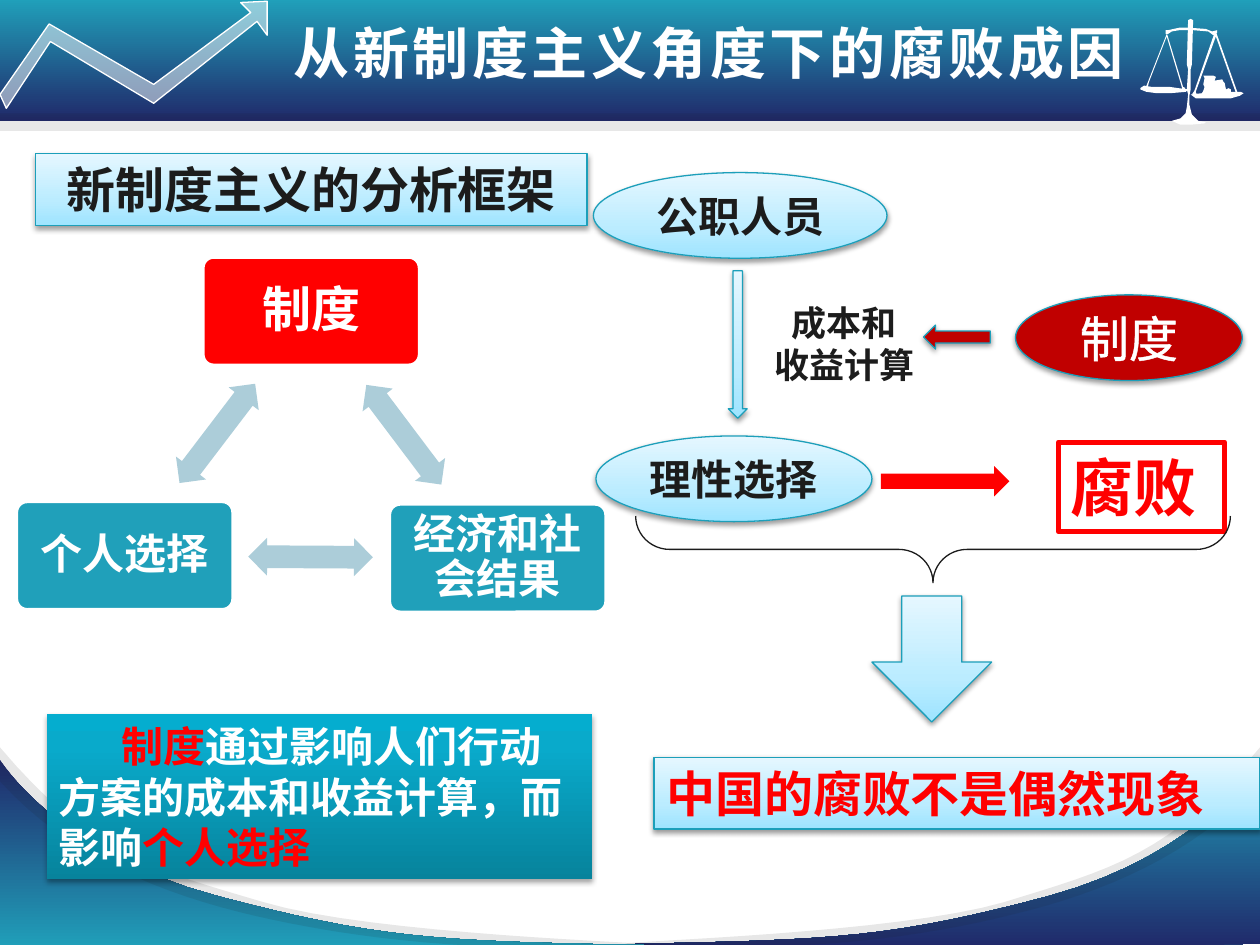
from lxml import etree
from pptx import Presentation
from pptx.dml.color import RGBColor
from pptx.enum.shapes import MSO_SHAPE
from pptx.enum.text import MSO_ANCHOR, MSO_AUTO_SIZE, PP_ALIGN
from pptx.oxml.ns import qn
from pptx.util import Inches, Pt

RECT, ROUNDED, OVAL = MSO_SHAPE.RECTANGLE, MSO_SHAPE.ROUNDED_RECTANGLE, MSO_SHAPE.OVAL
DOWN, LEFT_ARROW, RIGHT_ARROW = MSO_SHAPE.DOWN_ARROW, MSO_SHAPE.LEFT_ARROW, MSO_SHAPE.RIGHT_ARROW
TWO_WAY, BRACE = MSO_SHAPE.LEFT_RIGHT_ARROW, MSO_SHAPE.LEFT_BRACE
LEFT, CENTER = PP_ALIGN.LEFT, PP_ALIGN.CENTER
TOP, MIDDLE = MSO_ANCHOR.TOP, MSO_ANCHOR.MIDDLE
NO_FIT = MSO_AUTO_SIZE.NONE

WHITE = RGBColor(0xFF, 0xFF, 0xFF)
INK = RGBColor(0x1C, 0x1C, 0x1C)
RED = RGBColor(0xFF, 0x00, 0x00)
DARK_RED = RGBColor(0xC0, 0x00, 0x00)
TEAL = RGBColor(0x20, 0xA0, 0xBA)
NAVY = RGBColor(0x20, 0x29, 0x6A)
EDGE = RGBColor(0x1C, 0x9F, 0xBA)
PALE_TEAL = RGBColor(0xAC, 0xCD, 0xD9)

# Gradients run from top to bottom: (position in percent, colour)
BANNER = [(0, TEAL), (100, NAVY)]
BANNER_UP = [(0, NAVY), (100, TEAL)]
ICE = [(0, RGBColor(0xE5, 0xF7, 0xFF)), (65, RGBColor(0xBB, 0xEC, 0xFF)),
       (100, RGBColor(0x9E, 0xE4, 0xFF))]
DEEP = [(0, RGBColor(0x05, 0xAD, 0xCF)), (20, RGBColor(0x09, 0xAA, 0xCB)),
        (100, RGBColor(0x07, 0x83, 0x9C))]

LATIN, CJK = "Arial", "Noto Sans CJK SC"

# Outlines in inches: pairs are corners, sextuples are Bezier segments
HEADER = [(-0.01, 0.96), (-0.01, -0.01), (10, -0.01), (10.02, 0.96)]
RIGHT_CORNER = [(10, 6.02), (10, 7.49), (10, 7.49, 5.32, 7.56, 5.04, 7.49),
                (6.64, 7.46, 7.09, 7.44, 8.33, 7.11), (9.57, 6.77, 10, 6.02, 10, 6.02)]
RIGHT_RIM = [(10.01, 5.92), (9.29, 6.79, 8.81, 6.9, 7.97, 7.16),
             (7.12, 7.41, 4.94, 7.47, 4.96, 7.49), (6.32, 7.58, 7.31, 7.44, 8.03, 7.26),
             (8.74, 7.09, 9.48, 6.79, 10, 6.2)]
LEFT_CORNER = [(0, 6.03), (0, 7.5), (0, 7.5, 4.82, 7.57, 5.11, 7.5),
               (3.46, 7.47, 3, 7.45, 1.72, 7.11), (0.44, 6.77, 0, 6.03, 0, 6.03)]
LEFT_RIM = [(-0.01, 5.92), (0.73, 6.8, 1.22, 6.9, 2.09, 7.16),
            (2.96, 7.42, 5.21, 7.48, 5.19, 7.5), (3.79, 7.58, 2.77, 7.44, 2.03, 7.27),
            (1.29, 7.1, 0.54, 6.8, 0, 6.2)]
TREND = [(0, 0.75), (0.39, 0.19), (1.22, 0.67), (1.99, 0.1), (1.91, 0.02), (2.12, 0.01),
         (2.12, 0.28), (2.04, 0.17), (1.22, 0.82), (0.4, 0.33), (0.05, 0.86)]
SCALES = [
    # Post and foot
    [(9.43, 0.16), (9.45, 0.15), (9.47, 0.16), (9.46, 0.51), (9.45, 0.55), (9.45, 0.71),
     (9.44, 0.76), (9.44, 0.83), (9.46, 0.91), (9.51, 0.96), (9.57, 0.97), (9.56, 0.98),
     (9.45, 0.99), (9.37, 0.99), (9.3, 0.96), (9.37, 0.94), (9.41, 0.9), (9.42, 0.85),
     (9.43, 0.75), (9.42, 0.71), (9.43, 0.55), (9.42, 0.51)],
    # Beam
    [(9.27, 0.24), (9.25, 0.24), (9.25, 0.27), (9.27, 0.27), (9.3, 0.25), (9.36, 0.24),
     (9.47, 0.24), (9.59, 0.25), (9.63, 0.28), (9.66, 0.26), (9.66, 0.24), (9.62, 0.25),
     (9.57, 0.23), (9.43, 0.22), (9.36, 0.22)],
    # Left and right cords
    [(9.26, 0.27), (9.1, 0.68), (9.08, 0.69), (9.11, 0.69), (9.12, 0.65), (9.26, 0.29),
     (9.38, 0.69), (9.38, 0.71), (9.4, 0.71), (9.41, 0.7), (9.39, 0.69), (9.26, 0.26)],
    [(9.64, 0.26), (9.48, 0.72), (9.46, 0.75), (9.5, 0.75), (9.49, 0.73), (9.65, 0.29),
     (9.81, 0.74), (9.8, 0.75), (9.82, 0.75), (9.84, 0.74), (9.82, 0.73), (9.65, 0.25)],
    # Loaded right pan
    [(9.63, 0.6), (9.58, 0.6), (9.55, 0.6), (9.56, 0.62), (9.55, 0.67), (9.56, 0.69),
     (9.55, 0.72), (9.54, 0.74), (9.45, 0.75), (9.49, 0.78), (9.6, 0.78), (9.77, 0.78),
     (9.84, 0.76), (9.87, 0.74), (9.85, 0.73), (9.77, 0.73), (9.77, 0.71), (9.75, 0.7),
     (9.73, 0.71), (9.72, 0.66), (9.71, 0.65), (9.7, 0.63), (9.64, 0.64), (9.65, 0.61)],
    # Left pan
    [(9.22, 0.69), (9.14, 0.69), (9.08, 0.68), (9.05, 0.7), (9.05, 0.71), (9.1, 0.73),
     (9.18, 0.74), (9.29, 0.74), (9.41, 0.73), (9.43, 0.71), (9.35, 0.7), (9.28, 0.69)],
]


def paint(shape, fill=None, line=None, weight=0.75, alpha=None, shadow=None):
    """Fill is a colour, a list of gradient stops, or None."""
    shape.shadow.inherit = False
    props = shape._element.spPr
    if fill is None:
        shape.fill.background()
    elif isinstance(fill, list):
        shape.fill.gradient()
        shape.fill.gradient_angle = 270
        stops = props.find(qn("a:gradFill")).find(qn("a:gsLst"))
        for old_stop in list(stops):
            stops.remove(old_stop)
        for position, color in fill:
            stop = etree.SubElement(stops, qn("a:gs"), pos=str(position * 1000))
            etree.SubElement(stop, qn("a:srgbClr"), val=str(color))
    else:
        shape.fill.solid()
        shape.fill.fore_color.rgb = fill
        if alpha:
            color = props.find(qn("a:solidFill"))[0]
            etree.SubElement(color, qn("a:alpha"), val=str(alpha * 1000))
    if line is None:
        shape.line.fill.background()
    else:
        shape.line.color.rgb = line
        shape.line.width = Pt(weight)
    if shadow:
        cast = etree.SubElement(props.find(qn("a:effectLst")), qn("a:outerShdw"),
                                blurRad=str(Pt(3.1)), dist=str(Pt(1.6)),
                                dir="5400000", rotWithShape="0")
        color = etree.SubElement(cast, qn("a:srgbClr"), val="000000")
        etree.SubElement(color, qn("a:alpha"), val=str(shadow * 1000))


def add_block(slide, kind, box, adjust=(), rotation=0, **style):
    shape = slide.shapes.add_shape(kind, *map(Inches, box))
    for index, value in enumerate(adjust):
        shape.adjustments[index] = value
    shape.rotation = rotation
    paint(shape, **style)
    return shape


def add_ice(slide, kind, box, fill=ICE):
    return add_block(slide, kind, box, fill=fill, line=EDGE, shadow=38)


def add_outline(slide, outline, **style):
    """Draw a closed outline, with each Bezier segment cut into short lines."""
    points = []
    for part in outline:
        if len(part) == 2:
            points.append(part)
            continue
        start, c1, c2, end = points[-1], part[:2], part[2:4], part[4:]
        for t in (step / 16 for step in range(1, 17)):
            weights = ((1 - t) ** 3, 3 * t * (1 - t) ** 2, 3 * t * t * (1 - t), t ** 3)
            points.append(tuple(sum(w * p[axis] for w, p in zip(weights, (start, c1, c2, end)))
                                for axis in (0, 1)))
    corners = [(Inches(x), Inches(y)) for x, y in points]
    builder = slide.shapes.build_freeform(*corners[0])
    builder.add_line_segments(corners[1:], close=True)
    paint(builder.convert_to_shape(), **style)


def write(shape, paragraphs, size, font=CJK, bold=True, align=CENTER, anchor=TOP,
          spacing=None, indent=0):
    """Each paragraph is a list of (text, colour) runs; returns the last run."""
    frame = shape.text_frame
    frame.word_wrap = True
    frame.auto_size = NO_FIT
    frame.vertical_anchor = anchor
    for index, runs in enumerate(paragraphs):
        paragraph = frame.add_paragraph() if index else frame.paragraphs[0]
        paragraph.alignment = align
        paragraph.line_spacing = spacing
        if indent:
            paragraph._p.get_or_add_pPr().set("indent", str(Inches(indent)))
        for text, color in runs:
            run = paragraph.add_run()
            run.text = text
            run.font.size, run.font.bold, run.font.name = Pt(size), bold, font
            run.font.color.rgb = color
            etree.SubElement(run._r.get_or_add_rPr(), qn("a:ea"), typeface=CJK)
    return run


def add_backdrop(slide):
    add_outline(slide, HEADER, fill=BANNER)
    add_outline(slide, RIGHT_CORNER, fill=BANNER)
    add_outline(slide, RIGHT_RIM, fill=INK, alpha=10)
    add_block(slide, RECT, (0, 0.9, 10, 0.14), fill=INK, alpha=10)
    for part in SCALES:
        add_outline(slide, part, fill=WHITE)
    add_outline(slide, LEFT_CORNER, fill=BANNER_UP)
    add_outline(slide, LEFT_RIM, fill=INK, alpha=10)
    add_outline(slide, TREND, fill=WHITE, alpha=50, line=WHITE)


def add_title(slide):
    title = slide.shapes.title
    title.left, title.top, title.width, title.height = map(Inches, (2.23, 0.1, 7.1, 0.64))
    run = write(title, [[("从新制度主义角度下的腐败成因", WHITE)]], 32, align=LEFT)
    run._r.get_or_add_rPr().set("spc", "200")
    slide.shapes._spTree.append(title._element)  # in front of the header


def add_framework(slide):
    heading = add_ice(slide, RECT, (0.28, 1.22, 4.38, 0.57))
    write(heading, [[("新制度主义的分析框架", INK)]], 28, LATIN)
    # Triangle of mutual influence
    for text, left, top, fill, size in (("制度", 1.61, 2.04, RED, 28),
                                        ("经济和社会结果", 3.09, 4, TEAL, 24),
                                        ("个人选择", 0.13, 3.98, TEAL, 24)):
        node = add_block(slide, ROUNDED, (left, top, 1.72, 0.86), (0.1,),
                         fill=fill, line=WHITE, weight=2)
        write(node, [[(text, WHITE)]], size, anchor=MIDDLE, spacing=0.9)
    for left, top, rotation in ((2.71, 3.3, 53), (1.97, 4.27, 180.3), (1.23, 3.29, 307.3)):
        add_block(slide, TWO_WAY, (left, top, 0.99, 0.3), (0.6, 0.5), rotation, fill=PALE_TEAL)
    summary = add_block(slide, RECT, (0.37, 5.67, 4.33, 1.31), fill=DEEP, shadow=35)
    write(summary, [[("制度", RED), ("通过影响人们行动方案的成本和收益计算，而影响", WHITE),
                     ("个人选择", RED)]], 24, align=LEFT, indent=0.5)


def add_causes(slide):
    conclusion = add_ice(slide, RECT, (5.19, 6.01, 4.81, 0.57))
    write(conclusion, [[("中国的腐败不是偶然现象", RED)]], 28, LATIN, align=LEFT)
    corruption = add_block(slide, RECT, (8.4, 3.51, 1.32, 0.71), line=RED, weight=3)
    write(corruption, [[("腐败", RED)]], 36, LATIN, align=LEFT)
    # From officials to rational choice
    officials = add_ice(slide, OVAL, (4.71, 1.37, 2.33, 0.68))
    write(officials, [[("公职人员", INK)]], 24, LATIN, anchor=MIDDLE)
    choice = add_ice(slide, OVAL, (4.73, 3.46, 2.19, 0.68))
    write(choice, [[("理性选择", INK)]], 24, anchor=MIDDLE)
    add_ice(slide, DOWN, (5.78, 2.15, 0.15, 1.17))
    calculation = slide.shapes.add_textbox(*map(Inches, (5.92, 2.34, 1.56, 0.77)))
    write(calculation, [[("成本和", INK)], [("收益计算", INK)]], 20, LATIN)
    # Institution acts on the calculation
    institution = add_ice(slide, OVAL, (8.06, 2.34, 1.8, 0.68), DARK_RED)
    run = write(institution, [[("制度", WHITE)]], 28, bold=False, anchor=MIDDLE)
    stroke = etree.Element(qn("a:ln"), w=str(Pt(1.45)))
    stroke_fill = etree.SubElement(stroke, qn("a:solidFill"))
    etree.SubElement(stroke_fill, qn("a:srgbClr"), val=str(WHITE))
    run._r.get_or_add_rPr().insert(0, stroke)
    add_ice(slide, LEFT_ARROW, (7.33, 2.58, 0.53, 0.19), DARK_RED)
    # Towards corruption and the conclusion
    add_block(slide, RIGHT_ARROW, (6.99, 3.7, 1.02, 0.24), fill=RED)
    add_block(slide, BRACE, (7.14, 2, 0.53, 4.72), (0.51, 0.5), 270, line=INK)
    add_ice(slide, DOWN, (6.92, 4.73, 0.95, 1))


def main():
    deck = Presentation()
    deck.slide_width, deck.slide_height = Inches(10), Inches(7.5)
    slide = deck.slides.add_slide(deck.slide_layouts[5])
    add_backdrop(slide)
    add_title(slide)
    add_framework(slide)
    add_causes(slide)
    deck.save("out.pptx")


if __name__ == "__main__":
    main()
